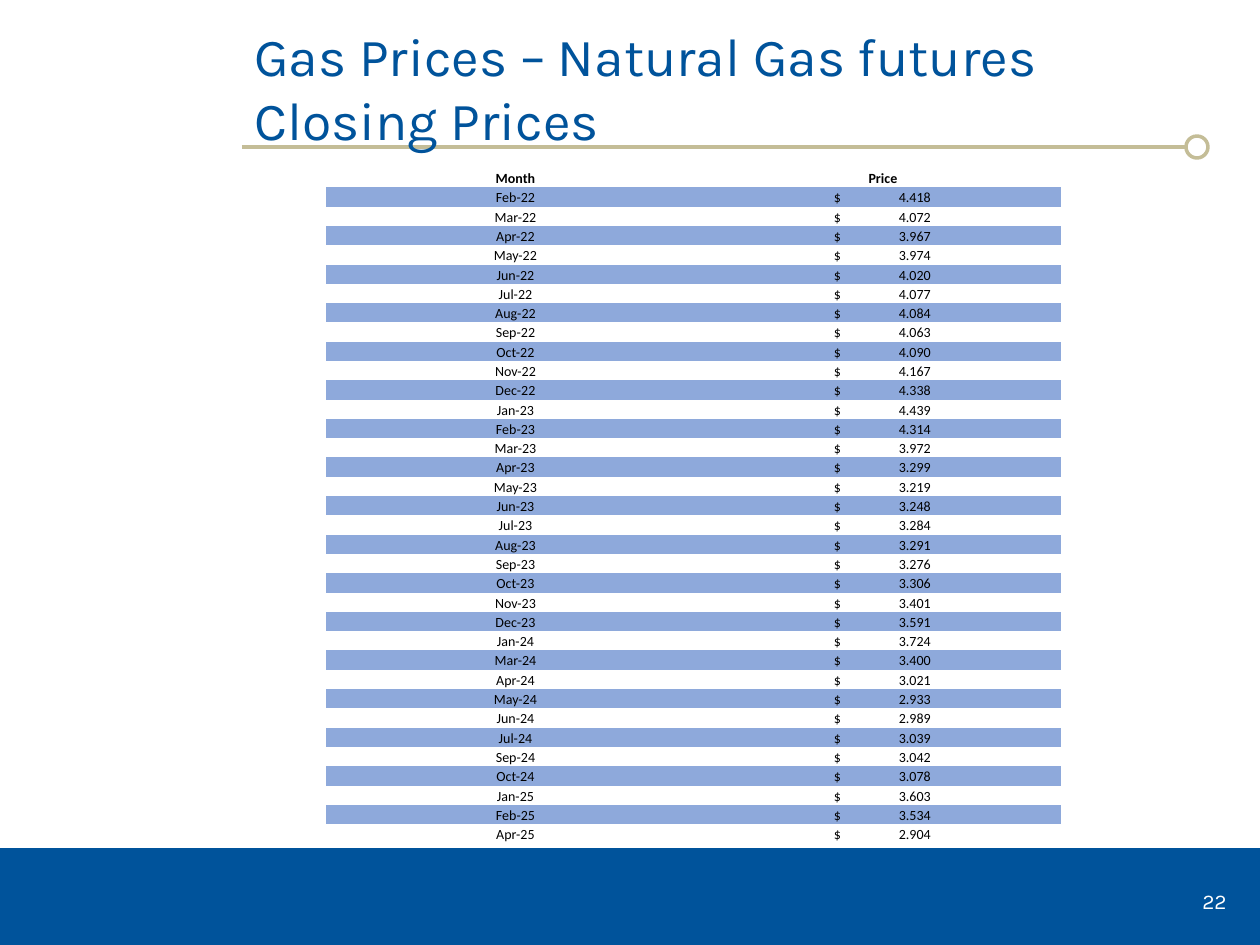
from pptx import Presentation
from pptx.dml.color import RGBColor
from pptx.enum.shapes import MSO_CONNECTOR, MSO_SHAPE
from pptx.enum.text import MSO_ANCHOR, PP_ALIGN
from pptx.oxml import parse_xml
from pptx.oxml.ns import nsdecls
from pptx.util import Emu, Pt

BLUE = RGBColor(0x00, 0x53, 0x9B)
TAN = RGBColor(0xC4, 0xBD, 0x97)
BAND = RGBColor(0x8E, 0xA9, 0xDB)
WHITE = RGBColor(0xFF, 0xFF, 0xFF)
BLACK = RGBColor(0x00, 0x00, 0x00)
RECT, OVAL = MSO_SHAPE.RECTANGLE, MSO_SHAPE.OVAL
LINE = MSO_CONNECTOR.STRAIGHT
LEFT, MID, RIGHT = PP_ALIGN.LEFT, PP_ALIGN.CENTER, PP_ALIGN.RIGHT
CENTER, BASE = MSO_ANCHOR.MIDDLE, MSO_ANCHOR.BOTTOM
PLAIN = "{2D5ABB26-0587-4C30-8999-92F81FD0307C}"

PRICES = [
    ("Feb-22", "4.418"), ("Mar-22", "4.072"), ("Apr-22", "3.967"),
    ("May-22", "3.974"), ("Jun-22", "4.020"), ("Jul-22", "4.077"),
    ("Aug-22", "4.084"), ("Sep-22", "4.063"), ("Oct-22", "4.090"),
    ("Nov-22", "4.167"), ("Dec-22", "4.338"), ("Jan-23", "4.439"),
    ("Feb-23", "4.314"), ("Mar-23", "3.972"), ("Apr-23", "3.299"),
    ("May-23", "3.219"), ("Jun-23", "3.248"), ("Jul-23", "3.284"),
    ("Aug-23", "3.291"), ("Sep-23", "3.276"), ("Oct-23", "3.306"),
    ("Nov-23", "3.401"), ("Dec-23", "3.591"), ("Jan-24", "3.724"),
    ("Mar-24", "3.400"), ("Apr-24", "3.021"), ("May-24", "2.933"),
    ("Jun-24", "2.989"), ("Jul-24", "3.039"), ("Sep-24", "3.042"),
    ("Oct-24", "3.078"), ("Jan-25", "3.603"), ("Feb-25", "3.534"),
    ("Apr-25", "2.904"),
]


def px(n):
    return Emu(round(n * 914400 / 126))


class Deck:
    """Draws styled elements on the current slide."""

    head, body = "Karla", "Calibri"

    def __init__(self, show):
        self.slide = show.slides.add_slide(show.slide_layouts[6])
        self.shapes = self.slide.shapes

    def shape(self, kind, x, y, w, h, fill, edge):
        item = self.shapes.add_shape(kind, px(x), px(y), px(w), px(h))
        item.shadow.inherit = False
        item.fill.solid()
        item.fill.fore_color.rgb = fill
        item.line.color.rgb = edge
        item.line.width = Pt(2)

    def rule(self, x, y, end, color):
        item = self.shapes.add_connector(LINE, px(x), px(y), px(end), px(y))
        item.line.color.rgb = color
        item.line.width = Pt(2.25)
        item._element.spPr.append(parse_xml(f"<a:effectLst {nsdecls('a')}/>"))

    def run(self, para, text, font, size, color, bold=False):
        run = para.add_run()
        run.text = text
        run.font.name = font
        run.font.size = Pt(size)
        run.font.bold = bold
        run.font.color.rgb = color

    def text(self, x, y, w, h, text, size, color, align=LEFT):
        box = self.shapes.add_textbox(px(x), px(y), px(w), px(h))
        frame = box.text_frame
        frame.word_wrap = True
        frame.vertical_anchor = CENTER
        para = frame.paragraphs[0]
        para.alignment = align
        self.run(para, text, self.head, size, color)

    def cell(self, cell, text, band, bold=False, left=1, tab=0):
        cell.margin_left, cell.margin_right = px(left), px(1)
        cell.margin_top, cell.margin_bottom = px(1), 0
        cell.vertical_anchor = BASE
        if band:
            cell.fill.solid()
            cell.fill.fore_color.rgb = BAND
        else:
            cell.fill.background()
        para = cell.text_frame.paragraphs[0]
        para.alignment = LEFT if tab else MID
        if tab:
            para._p.get_or_add_pPr().append(parse_xml(
                f'<a:tabLst {nsdecls("a")}><a:tab pos="{px(tab)}" algn="r"/></a:tabLst>'))
        self.run(para, text, self.body, 8, BLACK, bold)

    def table(self, x, y, cols, h, heads, data):
        count = len(data) + 1
        frame = self.shapes.add_table(count, len(cols), px(x), px(y), px(sum(cols)), px(h))
        table = frame.table
        table.first_row = table.horz_banding = False
        table._tbl.tblPr[0].text = PLAIN
        for col, wide in zip(table.columns, cols):
            col.width = px(wide)
        for row in table.rows:
            row.height = px(h / count)
        for col, name in enumerate(heads):
            self.cell(table.cell(0, col), name, False, bold=True)
        for row, (month, price) in enumerate(data, 1):
            band = row % 2 == 1
            self.cell(table.cell(row, 0), month, band)
            self.cell(table.cell(row, 1), f"$\t{price}", band, left=129, tab=97)


def main():
    show = Presentation()
    show.slide_width, show.slide_height = px(1260), px(945)
    deck = Deck(show)
    deck.shape(RECT, 0, 850, 1260, 95, BLUE, BLUE)
    deck.rule(242, 147, 1197, TAN)
    deck.shape(OVAL, 1186, 136, 22, 22, WHITE, TAN)
    deck.text(242, 38, 955, 98, "Gas Prices – Natural Gas futures Closing Prices", 30.6, BLUE)
    deck.text(945, 876, 294, 50, "22", 12, WHITE, RIGHT)
    deck.table(326, 168, (379, 356), 676, ("Month", "Price"), PRICES)
    show.save("out.pptx")


if __name__ == "__main__":
    main()
